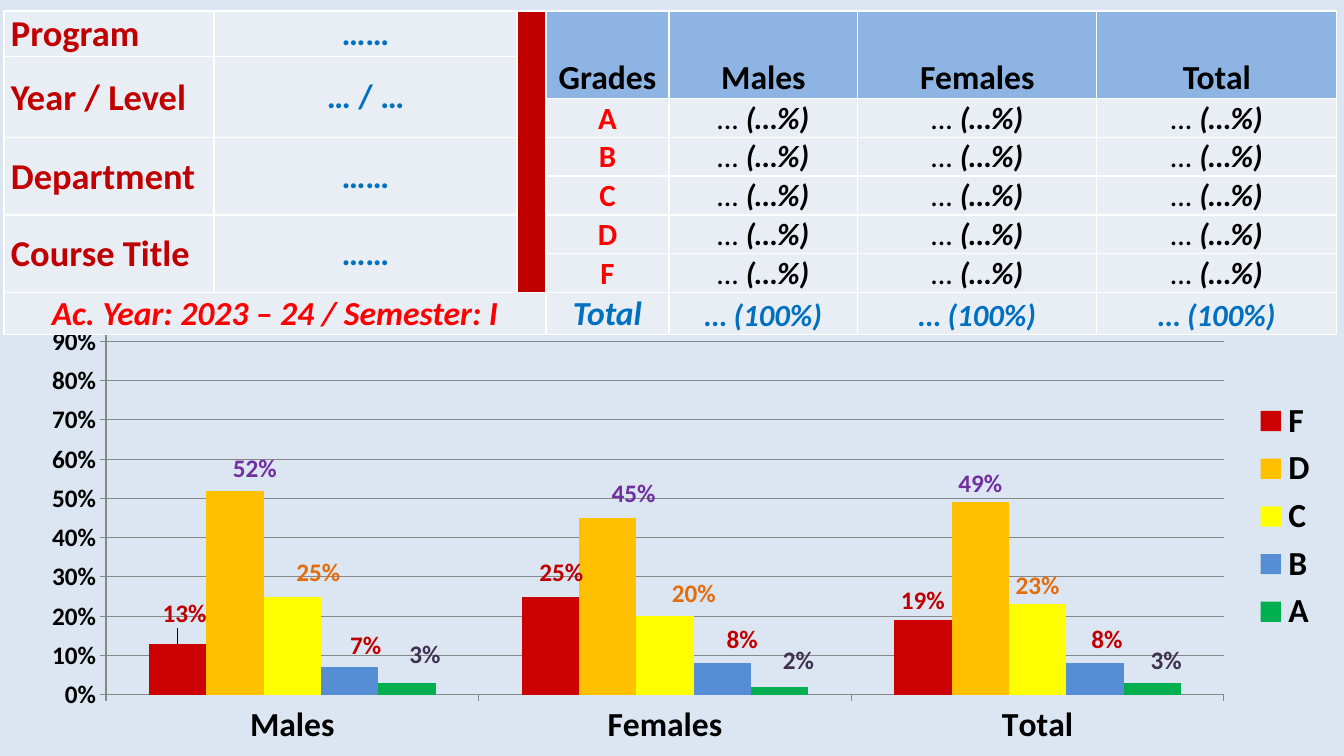
import pptx
import pptx.chart.data
import pptx.dml.color
import pptx.enum.chart
import pptx.enum.text
import pptx.oxml
import pptx.oxml.ns
import pptx.util

ALIGN = pptx.enum.text.PP_ALIGN
ANCHOR = pptx.enum.text.MSO_ANCHOR
CHART = pptx.enum.chart

RED, BRIGHT_RED, BLUE, BLACK, GREY = "C00000", "FF0000", "0070C0", "000000", "888888"
HEADER_FILL, CELL_FILL = "8EB4E3", "E9EDF4"

LABEL = {"size": 26, "color": RED, "bold": True}
ENTRY = {"size": 24, "color": BLUE, "bold": True}
HEADER = {"size": 24, "color": BLACK, "bold": True}
GRADE = {"size": 22, "color": BRIGHT_RED, "bold": True}
COUNT = {"size": 22, "color": BLACK, "bold": False, "italic": True}
PERCENT = COUNT | {"bold": True}
TERM = {"size": 24, "color": BRIGHT_RED, "bold": True, "italic": True}
TOTAL = TERM | {"color": BLUE}
TOTAL_COUNT = TOTAL | {"size": 22}

COLUMNS = [210, 303, 29, 123, 189, 239, 240]
ROWS = [45, 42, 39, 38, 39, 38, 39, 42]
GROUPS = ["Males", "Females", "Total"]
COURSE = [(0, 0, "Program", "……"), (1, 2, "Year / Level", "… / …"),
          (3, 4, "Department", "……"), (5, 6, "Course Title", "……")]

# name, values, bar colour, label colour, label shifts in px by point
SERIES = [
    ("F", (0.13, 0.25, 0.19), "CC0000", RED, [(7, -11), (11, -5)]),
    ("D", (0.52, 0.45, 0.49), "FFC000", "7030A0", [(20, -3), (26, -5)]),
    ("C", (0.25, 0.2, 0.23), "FFFF00", "E46C0A", [(26, -5), (29, -4)]),
    ("B", (0.07, 0.08, 0.08), "558ED5", RED, [(16, -3), (20, -5), (12, -5)]),
    ("A", (0.03, 0.02, 0.03), "00B050", "403152", [(18, -9), (19, -7), (14, -3)]),
]


def px(length):
    return pptx.util.Emu(round(length * 914400 / 100.8))


def rgb(value):
    return pptx.dml.color.RGBColor.from_string(value)


def assign(target, values):
    for name, value in values.items():
        setattr(target, name, value)


def layout_xml(**values):
    parts = "".join(f'<c:{name} val="{value}"/>' for name, value in values.items())
    return pptx.oxml.parse_xml(
        f'<c:layout {pptx.oxml.ns.nsdecls("c")}><c:manualLayout>{parts}'
        "</c:manualLayout></c:layout>")


class SlideBuilder:
    """Holds the text style and the current slide, and adds elements to it."""

    def __init__(self, presentation, font_name, background):
        self.font_name = font_name
        self.slide = presentation.slides.add_slide(presentation.slide_layouts[6])
        self.slide.background.fill.solid()
        self.slide.background.fill.fore_color.rgb = rgb(background)

    def style_font(self, font, size, color, **flags):
        assign(font, {"name": self.font_name, "size": pptx.util.Pt(size)} | flags)
        font.color.rgb = rgb(color)

    def style_line(self, line):
        line.color.rgb = rgb(GREY)
        line.width = pptx.util.Pt(0.75)

    def add_table(self, left, top, columns, rows):
        table = self.slide.shapes.add_table(
            len(rows), len(columns), px(left), px(top), px(sum(columns)), px(sum(rows))).table
        assign(table, {"first_row": False, "horz_banding": False})
        for column, width in zip(table.columns, columns):
            column.width = px(width)
        for row, height in zip(table.rows, rows):
            row.height = px(height)
        for cell in table.iter_cells():
            self.style_cell(cell)
        return table

    def style_cell(self, cell):
        assign(cell, {"margin_left": px(1), "margin_right": px(1),
                      "margin_top": px(1), "margin_bottom": 0})
        properties = cell._tc.get_or_add_tcPr()
        for index, side in enumerate("LRTB"):
            properties.insert(index, pptx.oxml.parse_xml(
                f'<a:ln{side} {pptx.oxml.ns.nsdecls("a")} w="12700"><a:solidFill>'
                f'<a:srgbClr val="FFFFFF"/></a:solidFill></a:ln{side}>'))
        cell.fill.solid()
        cell.fill.fore_color.rgb = rgb(CELL_FILL)

    def fill_cell(self, cell, *runs, anchor=ANCHOR.BOTTOM, align=ALIGN.CENTER, indent=0):
        cell.vertical_anchor = anchor
        paragraph = cell.text_frame.paragraphs[0]
        paragraph.alignment = align
        if indent:
            paragraph._p.get_or_add_pPr().set("marL", str(px(indent)))
        for text, style in runs:
            run = paragraph.add_run()
            run.text = text
            self.style_font(run.font, **style)

    def add_column_chart(self, left, top, width, height, plot):
        data = pptx.chart.data.CategoryChartData(number_format="0%")
        data.categories = GROUPS
        for name, values, *_ in SERIES:
            data.add_series(name, values)
        chart = self.slide.shapes.add_chart(
            CHART.XL_CHART_TYPE.COLUMN_CLUSTERED,
            px(left), px(top), px(width), px(height), data).chart
        assign(chart, {"has_title": False, "has_legend": True})
        self.style_font(chart.font, 18, BLACK)
        assign(chart.legend, {"position": CHART.XL_LEGEND_POSITION.RIGHT,
                              "include_in_layout": False})
        self.style_font(chart.legend.font, 24, BLACK, bold=True)
        assign(chart.plots[0], {"gap_width": 150, "overlap": 0, "vary_by_categories": False})
        for axis, size in ((chart.category_axis, 24), (chart.value_axis, 18)):
            axis.major_tick_mark = CHART.XL_TICK_MARK.OUTSIDE
            self.style_font(axis.tick_labels.font, size, BLACK, bold=True)
            self.style_line(axis.format.line)
        assign(chart.value_axis, {"minimum_scale": 0, "maximum_scale": 1, "major_unit": 0.1,
                                  "has_major_gridlines": True})
        assign(chart.value_axis.tick_labels,
               {"number_format": "0%", "number_format_is_linked": False})
        self.style_line(chart.value_axis.major_gridlines.format.line)
        for series, (_, _, fill, color, shifts) in zip(chart.plots[0].series, SERIES):
            series.format.fill.solid()
            series.format.fill.fore_color.rgb = rgb(fill)
            self.label_series(series, color, shifts, width, height)
        plot_left, plot_top, plot_width, plot_height = plot
        plot_area = chart._chartSpace.chart.plotArea
        for old_layout in plot_area.findall(pptx.oxml.ns.qn("c:layout")):
            plot_area.remove(old_layout)
        plot_area.insert(0, layout_xml(
            layoutTarget="inner", xMode="edge", yMode="edge",
            x=(plot_left - left) / width, y=(plot_top - top) / height,
            w=plot_width / width, h=plot_height / height))

    def label_series(self, series, color, shifts, width, height):
        position = CHART.XL_LABEL_POSITION.OUTSIDE_END
        labels = series.data_labels
        assign(labels, {"show_value": True, "position": position,
                        "number_format": "0%", "number_format_is_linked": False})
        self.style_font(labels.font, 18, color, bold=True)
        for index, (across, down) in enumerate(shifts):
            label = series.points[index].data_label
            self.style_font(label.font, 18, color, bold=True)
            label.position = position
            element = series._element.xpath(f"c:dLbls/c:dLbl[c:idx/@val={index}]")[0]
            element.insert(1, layout_xml(x=across / width, y=down / height))


def fill_grades(builder, table):
    for first, last, label, entry in COURSE:
        for column in (0, 1):
            if last > first:
                table.cell(first, column).merge(table.cell(last, column))
        builder.fill_cell(table.cell(first, 0), (label, LABEL),
                          anchor=ANCHOR.MIDDLE, align=ALIGN.LEFT, indent=6)
        builder.fill_cell(table.cell(first, 1), (entry, ENTRY), anchor=ANCHOR.MIDDLE)
    table.cell(0, 2).merge(table.cell(6, 2))
    table.cell(0, 2).fill.fore_color.rgb = rgb(RED)
    for column, heading in enumerate(["Grades", *GROUPS], start=3):
        cell = table.cell(0, column)
        cell.merge(table.cell(1, column))
        cell.fill.fore_color.rgb = rgb(HEADER_FILL)
        builder.fill_cell(cell, (heading, HEADER))
    for row, grade in enumerate("ABCDF", start=2):
        builder.fill_cell(table.cell(row, 3), (grade, GRADE))
        for column in (4, 5, 6):
            builder.fill_cell(table.cell(row, column), ("… ", COUNT), ("(…%)", PERCENT))
    table.cell(7, 0).merge(table.cell(7, 2))
    builder.fill_cell(table.cell(7, 0), ("Ac. Year: 2023 – 24 / Semester: I", TERM))
    builder.fill_cell(table.cell(7, 3), ("Total", TOTAL))
    for column in (4, 5, 6):
        builder.fill_cell(table.cell(7, column), ("… (100%)", TOTAL_COUNT))


def main():
    presentation = pptx.Presentation()
    assign(presentation, {"slide_width": px(1344), "slide_height": px(756)})
    builder = SlideBuilder(presentation, "Calibri", "DCE6F2")
    builder.add_column_chart(13, 277, 1316, 479, plot=(106, 302, 1118, 393))
    fill_grades(builder, builder.add_table(4, 11, COLUMNS, ROWS))
    presentation.save("out.pptx")


if __name__ == "__main__":
    main()
